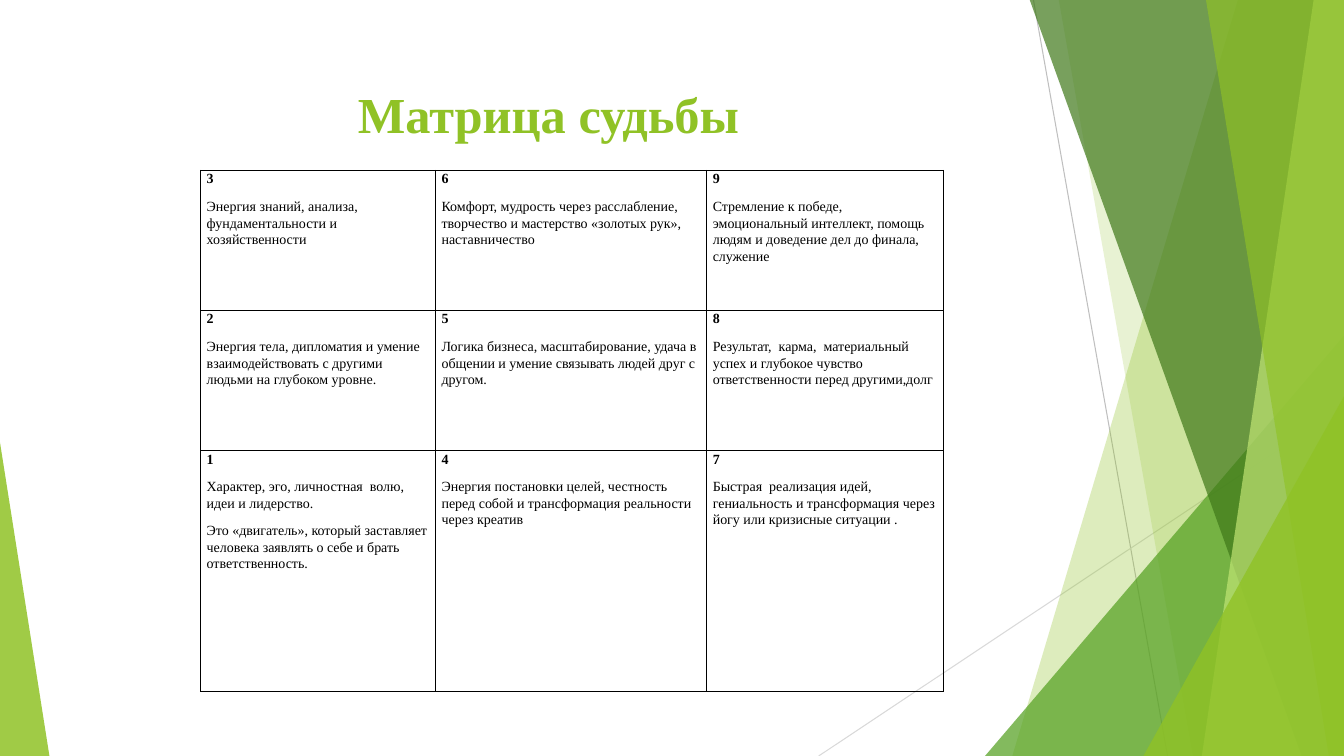
from dataclasses import dataclass

import pptx
import pptx.dml.color
import pptx.enum.shapes
import pptx.enum.text
import pptx.oxml
import pptx.oxml.ns
import pptx.util

Inches, Pt = pptx.util.Inches, pptx.util.Pt
FONT = "Times New Roman"
LIME, GREEN, DARK, PALE = "90C226", "54A021", "3F7819", "C0E474"
TOP, RIGHT, BOTTOM = -0.01, 13.33, 7.5


@dataclass
class Ray:
    start: tuple[float, float]
    end: tuple[float, float]
    color: str


@dataclass
class Band:
    """Facet running from the slide's right edge to a slanted left edge."""
    top_x: float
    bottom_x: float
    color: str
    opacity: int


@dataclass
class Corner:
    """Right triangle standing on the bottom edge; apex 0 is left, 1 is right."""
    left: float
    top: float
    width: float
    apex: int
    color: str
    opacity: int


RAYS = [
    Ray((10.25, 0), (11.58, BOTTOM), "BFBFBF"),
    Ray((RIGHT, 4.03), (8.12, BOTTOM), "D9D9D9"),
]
FACETS = [
    Band(12.28, 10.04, LIME, 30),
    Band(10.5, 11.83, LIME, 20),
    Corner(9.77, 3.33, 3.56, 1, GREEN, 72),
    Band(10.21, 12.91, DARK, 70),
    Band(13.03, 11.92, PALE, 70),
    Band(11.96, 13.18, LIME, 65),
    Corner(11.34, 3.93, 1.99, 1, LIME, 80),
    Corner(0, 4.39, 0.49, 0, LIME, 85),
]

COLUMNS = [2.33, 2.69, 2.35]
ROWS = [1.39, 1.39, 2.39]
MATRIX = [
    [
        ["3", "Энергия знаний, анализа, фундаментальности и хозяйственности"],
        ["6", "Комфорт, мудрость через расслабление, творчество и мастерство "
              "«золотых рук», наставничество"],
        ["9", "Стремление к победе, эмоциональный интеллект, помощь людям и "
              "доведение дел до финала, служение"],
    ],
    [
        ["2", "Энергия тела, дипломатия и умение взаимодействовать с другими "
              "людьми на глубоком уровне."],
        ["5", "Логика бизнеса, масштабирование, удача в общении и умение "
              "связывать людей друг с другом."],
        ["8", "Результат,  карма,  материальный успех и глубокое чувство "
              "ответственности перед другими,долг"],
    ],
    [
        ["1", "Характер, эго, личностная  волю, идеи и лидерство.",
         "Это «двигатель», который заставляет человека заявлять о себе и "
         "брать ответственность."],
        ["4", "Энергия постановки целей, честность перед собой и трансформация "
              "реальности через креатив"],
        ["7", "Быстрая  реализация идей, гениальность и трансформация через "
              "йогу или кризисные ситуации ."],
    ],
]


def rgb(color: str) -> pptx.dml.color.RGBColor:
    return pptx.dml.color.RGBColor.from_string(color)


def draw_ray(shapes, ray: Ray) -> None:
    cxn = shapes.add_connector(pptx.enum.shapes.MSO_CONNECTOR.STRAIGHT,
                               *map(Inches, ray.start + ray.end))
    cxn.line.color.rgb = rgb(ray.color)
    cxn.line.width = Pt(0.75)
    pptx.oxml.ns.qn("a:effectLst")
    cxn._element.spPr.append(pptx.oxml.parse_xml(
        f'<a:effectLst {pptx.oxml.ns.nsdecls("a")}/>'))


def draw_facet(shapes, facet: Band | Corner) -> None:
    if isinstance(facet, Band):
        builder = shapes.build_freeform(Inches(facet.top_x), Inches(TOP))
        builder.add_line_segments(
            [(Inches(x), Inches(y)) for x, y in
             [(RIGHT, TOP), (RIGHT, BOTTOM), (facet.bottom_x, BOTTOM)]])
        sp = builder.convert_to_shape()
    else:
        sp = shapes.add_shape(
            pptx.enum.shapes.MSO_SHAPE.ISOSCELES_TRIANGLE,
            Inches(facet.left), Inches(facet.top),
            Inches(facet.width), Inches(BOTTOM - facet.top))
        sp.adjustments[0] = facet.apex
    sp.shadow.inherit = False
    sp.line.fill.background()
    sp.fill.solid()
    sp.fill.fore_color.rgb = rgb(facet.color)
    clr = sp._element.spPr.find(".//" + pptx.oxml.ns.qn("a:srgbClr"))
    clr.append(pptx.oxml.parse_xml(
        f'<a:alpha {pptx.oxml.ns.nsdecls("a")} val="{facet.opacity * 1000}"/>'))


def style(p, size: float, color: str, bold: bool) -> None:
    p.line_spacing = 1.07
    p.space_after = Pt(8)
    p.font.name = FONT
    p.font.size = Pt(size)
    p.font.bold = bold
    p.font.color.rgb = rgb(color)


def draw_title(shapes, text: str) -> None:
    tf = shapes.add_textbox(Inches(0.74), Inches(0.67),
                            Inches(9.4), Inches(1.44)).text_frame
    tf.word_wrap = True
    tf.margin_top = Inches(0.11)
    p = tf.paragraphs[0]
    p.text = text
    p.alignment = pptx.enum.text.PP_ALIGN.CENTER
    style(p, 36, LIME, True)


def fill_cell(cell, texts: list[str]) -> None:
    cell.margin_left = cell.margin_right = Inches(0.06)
    cell.margin_top = cell.margin_bottom = 0
    tf = cell.text_frame
    for i, text in enumerate(texts):
        p = tf.add_paragraph() if i else tf.paragraphs[0]
        p.text = text
        style(p, 10, "000000", i == 0)
    # Borders come before the fill in the cell properties
    tc_pr = cell._tc.get_or_add_tcPr()
    for side in ("lnL", "lnR", "lnT", "lnB"):
        tc_pr.append(pptx.oxml.parse_xml(
            f'<a:{side} {pptx.oxml.ns.nsdecls("a")} w="{Pt(1)}"><a:solidFill>'
            f'<a:srgbClr val="000000"/></a:solidFill></a:{side}>'))
    cell.fill.background()


def draw_matrix(shapes) -> None:
    table = shapes.add_table(len(ROWS), len(COLUMNS), Inches(1.99), Inches(1.69),
                             Inches(sum(COLUMNS)), Inches(sum(ROWS))).table
    table.first_row = table.horz_banding = False
    for column, width in zip(table.columns, COLUMNS):
        column.width = Inches(width)
    for row, height, row_texts in zip(table.rows, ROWS, MATRIX):
        row.height = Inches(height)
        for cell, texts in zip(row.cells, row_texts):
            fill_cell(cell, texts)


def main() -> None:
    prs = pptx.Presentation()
    prs.slide_width, prs.slide_height = Inches(RIGHT), Inches(BOTTOM)
    shapes = prs.slides.add_slide(prs.slide_layouts[6]).shapes

    # Background facets
    for ray in RAYS:
        draw_ray(shapes, ray)
    for facet in FACETS:
        draw_facet(shapes, facet)

    # Content
    draw_title(shapes, "Матрица судьбы")
    draw_matrix(shapes)
    prs.save("out.pptx")


if __name__ == "__main__":
    main()
